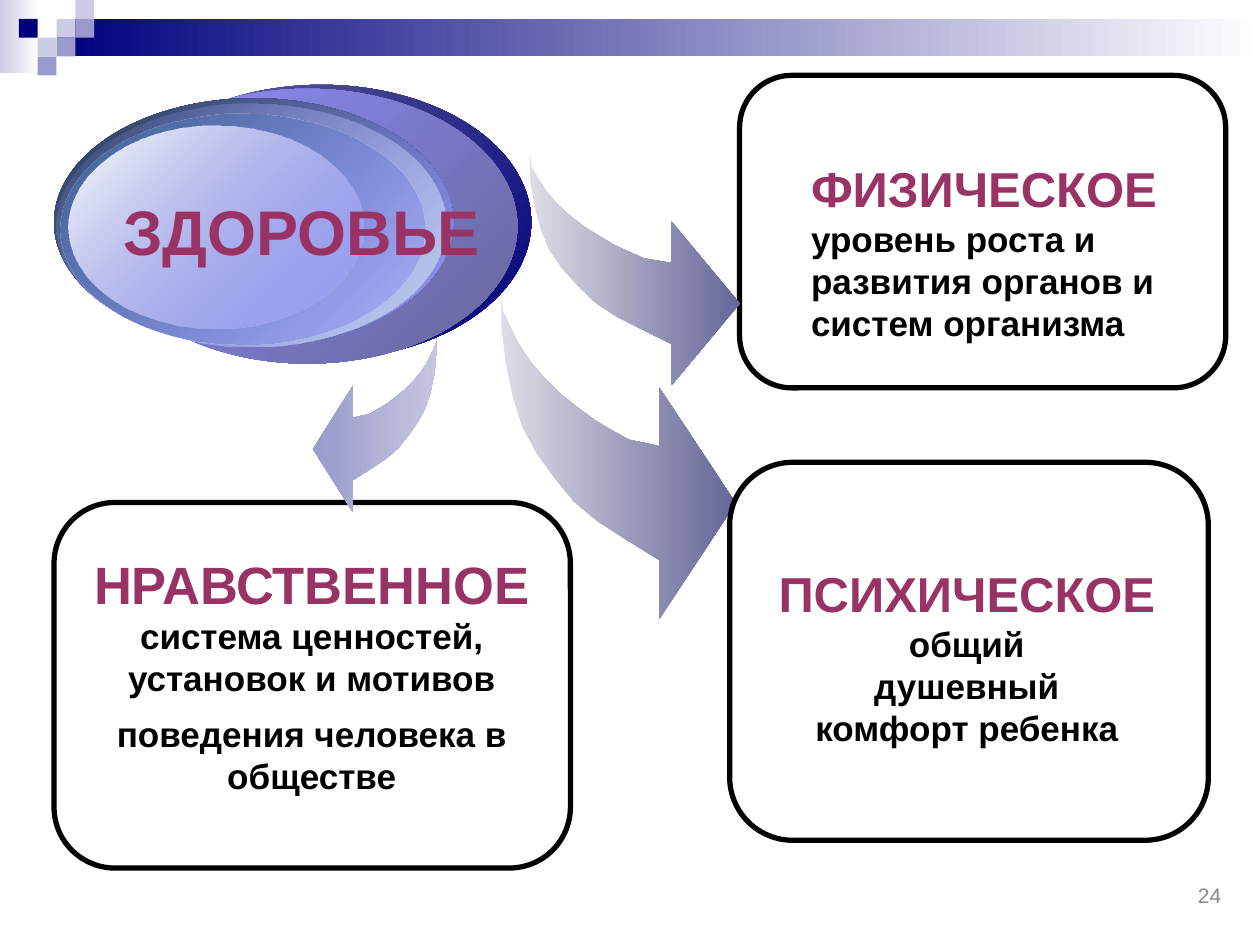
import pptx
import pptx.dml.color
import pptx.enum.shapes
import pptx.enum.text
import pptx.oxml.ns
import pptx.util
from lxml import etree

Cm = pptx.util.Cm
Pt = pptx.util.Pt
Kind = pptx.enum.shapes.MSO_SHAPE
Side = pptx.enum.text.PP_ALIGN
Hold = pptx.enum.text.MSO_ANCHOR

HUES = {
    "navy": "00007D", "pale": "CCCCE6", "mid": "9999CC", "white": "FFFFFF",
    "black": "000000", "plum": "993366", "grey": "898989", "dusk": "666699",
    "mist": "DDDDE5", "lilac": "C6C6E0", "iris": "8E8EFF", "blue": "9999FF",
    "ink": "253C57", "ice": "C2D3E8", "steel": "3F6696",
}

ARROW = [
    (0, 0), (0, 11), (2, 22), (5, 32), (9, 41), (15, 49), (22, 56), (31, 64),
    (41, 70), (54, 76), (67.5, 82), (67.5, 100), (100, 64.5), (67.5, 29),
    (67.5, 47), (61.5, 46), (54.5, 45), (47, 42), (40, 39), (32.5, 35),
    (25.5, 31), (18.5, 26), (12.5, 21), (7.5, 15.5), (4, 10.5), (0.6, 5),
]


class Deck:
    font = "Arial"

    def __init__(self):
        self.show = pptx.Presentation()
        self.show.slide_width = Cm(25.4)
        self.show.slide_height = Cm(19.05)
        self.slide = self.show.slides.add_slide(self.show.slide_layouts[6])

    def hue(self, name):
        return pptx.dml.color.RGBColor.from_string(HUES[name])

    def blend(self, shape, start, end, angle=0, clear=(100, 100)):
        shape.fill.gradient()
        shape.fill.gradient_angle = angle
        for stop, name in zip(shape.fill.gradient_stops, (start, end)):
            stop.color.rgb = self.hue(name)
        tag = pptx.oxml.ns.qn
        tints = list(shape.element.spPr.iter(tag("a:srgbClr")))
        for tint, part in zip(tints, clear):
            if part < 100:
                etree.SubElement(tint, tag("a:alpha")).set("val", str(part * 1000))

    def shape(self, kind, box):
        item = self.slide.shapes.add_shape(kind, *map(Cm, box))
        item.shadow.inherit = False
        item.line.fill.background()
        return item

    def block(self, box, name):
        item = self.shape(Kind.RECTANGLE, box)
        item.fill.solid()
        item.fill.fore_color.rgb = self.hue(name)

    def band(self, box, start, end):
        self.blend(self.shape(Kind.RECTANGLE, box), start, end)

    def disc(self, box, start, end, clear):
        self.blend(self.shape(Kind.OVAL, box), start, end, 315, clear)

    def card(self, box):
        item = self.shape(Kind.ROUNDED_RECTANGLE, box)
        item.fill.background()
        item.line.color.rgb = self.hue("black")
        item.line.width = Pt(3)

    def arrow(self, box, tail, head, flip=False):
        left, top, width, height = box
        spots = [
            (Cm(left + width * ((100 - x) if flip else x) / 100),
             Cm(top + height * y / 100))
            for x, y in ARROW
        ]
        pen = self.slide.shapes.build_freeform(*spots[0])
        pen.add_line_segments(spots[1:], close=True)
        item = pen.convert_to_shape()
        item.shadow.inherit = False
        item.line.fill.background()
        self.blend(item, *((head, tail) if flip else (tail, head)))

    def text(self, box, lines, align=Side.LEFT, hold=Hold.TOP, wrap=True):
        frame = self.slide.shapes.add_textbox(*map(Cm, box)).text_frame
        frame.word_wrap = wrap
        frame.vertical_anchor = hold
        frame.text = "\n".join(line[0] for line in lines)
        for para, (_, size, name, bold, gap) in zip(frame.paragraphs, lines):
            para.alignment = align
            if gap:
                para.space_before = Pt(gap)
            for run in para.runs:
                run.font.name = self.font
                run.font.size = Pt(size)
                run.font.bold = bold
                run.font.color.rgb = self.hue(name)


def head(words, size):
    return words, size, "plum", True, 0


def body(words, gap=0):
    return words, 20, "black", True, gap


def main():
    deck = Deck()

    deck.band((0, 0, 0.79, 1.47), "pale", "white")
    deck.band((1.14, 0.38, 24.26, 0.76), "navy", "white")
    cell = 0.38
    for col, row, name in [
        (3, 1, "pale"), (4, 0, "pale"), (4, 1, "mid"), (2, 2, "pale"),
        (1, 1, "navy"), (3, 2, "mid"), (2, 3, "mid"),
    ]:
        deck.block((col * cell, row * cell, cell, cell), name)

    deck.text((21.49, 17.53, 3.38, 1.02), [("24", 12, "grey", False, 0)],
              Side.RIGHT, Hold.MIDDLE)

    deck.card((14.91, 1.52, 9.8, 6.3))
    deck.card((1.09, 10.13, 10.41, 7.37))
    deck.text((1.47, 11, 9.63, 6.1), [
        head("НРАВСТВЕННОЕ", 30),
        body("система ценностей, установок и мотивов"),
        body("поведения человека в обществе", 8),
    ], Side.CENTER)

    deck.arrow((6.3, 6.73, 2.51, 3.6), "lilac", "mid", flip=True)
    deck.arrow((10.69, 3.12, 4.22, 4.65), "mist", "dusk")

    for box, start, end, clear in [
        ((2.25, 1.71, 8.46, 5.54), "dusk", "navy", (100, 100)),
        ((1.97, 1.79, 8.46, 5.54), "iris", "dusk", (100, 100)),
        ((1.09, 1.98, 8.05, 5), "ink", "blue", (100, 100)),
        ((1.14, 2.08, 7.85, 4.9), "blue", "ice", (0, 100)),
        ((1.23, 2.3, 7.32, 4.65), "steel", "blue", (100, 48)),
        ((1.38, 2.53, 5.94, 4.09), "white", "blue", (100, 38)),
    ]:
        deck.disc(box, start, end, clear)
    deck.text((2.24, 3.76, 7.75, 1.75), [head("ЗДОРОВЬЕ", 36)],
              hold=Hold.MIDDLE)

    deck.arrow((10.11, 5.92, 4.72, 6.55), "mist", "dusk")
    deck.card((14.71, 9.32, 9.65, 7.62))

    deck.text((16.1, 3.07, 8.41, 4.01), [
        head("ФИЗИЧЕСКОЕ", 28),
        body("уровень роста и развития органов и систем организма"),
    ])
    deck.text((15.44, 11.23, 8.1, 3.99), [
        head("ПСИХИЧЕСКОЕ", 28),
        body("общий"),
        body("душевный"),
        body("комфорт ребенка"),
    ], Side.CENTER, wrap=False)

    deck.show.save("out.pptx")


if __name__ == "__main__":
    main()
